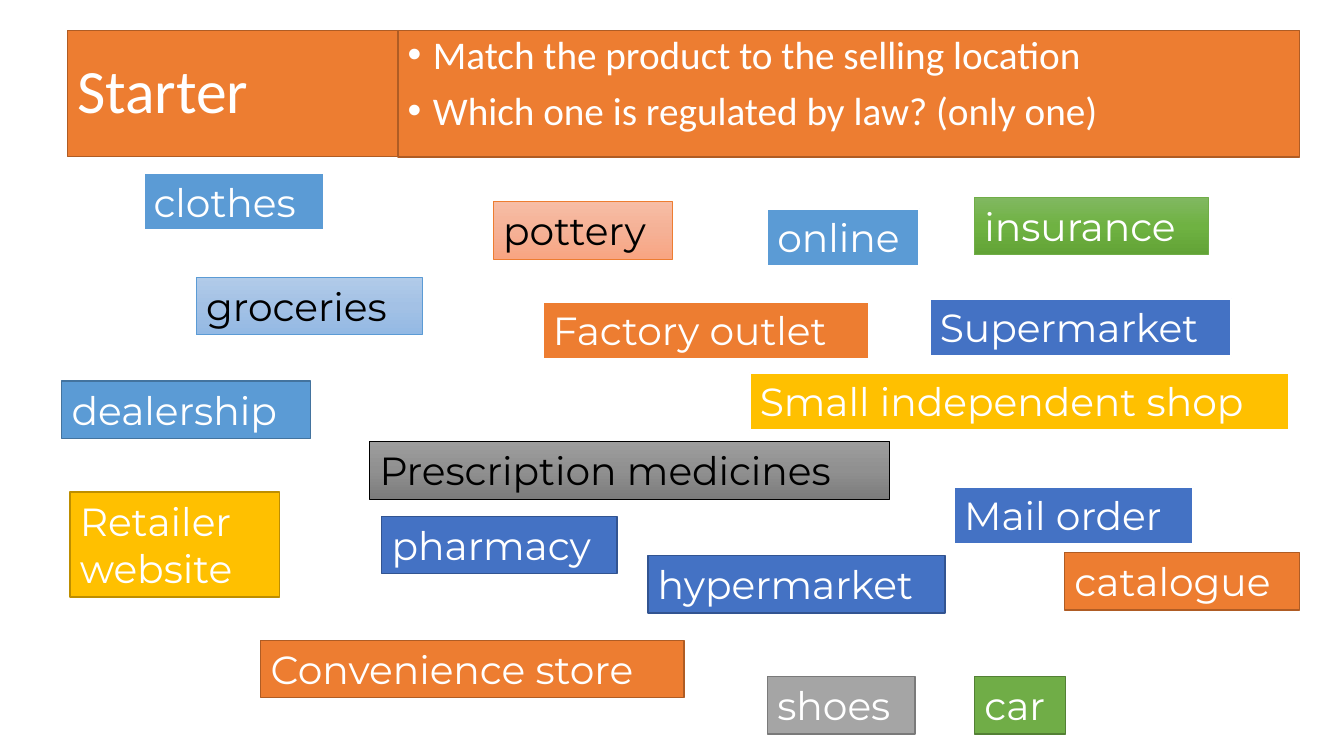
"""Build a starter slide that matches products to selling locations."""
from copy import deepcopy
from dataclasses import dataclass

from lxml import etree
from pptx import Presentation
from pptx import util as u
from pptx.dml.color import RGBColor
from pptx.enum import shapes, text
from pptx.oxml.ns import qn

SLIDE_WIDTH, SLIDE_HEIGHT = u.Inches(13.33), u.Inches(7.5)
COLUMN, ROW = SLIDE_WIDTH / 100, SLIDE_HEIGHT / 100
TAG_ROWS = 7.6
WHITE, BLACK = "FFFFFF", "000000"
HEADING_FONT, TAG_FONT = "Calibri", "Montserrat"


@dataclass(frozen=True)
class Look:
    fills: tuple[str, ...]
    line: str = WHITE
    line_width: float = 1.5
    ink: str = WHITE


@dataclass(frozen=True)
class Tag:
    words: str
    left: float
    top: float
    columns: float
    look: Look
    rows: float = TAG_ROWS
    wraps: bool = False


BLUE, ORANGE = Look(("5B9BD5",)), Look(("ED7D31",))
GOLD, INDIGO = Look(("FFC000",)), Look(("4472C4",))
BLUE_EDGED = Look(("5B9BD5",), "43739E", 1)
ORANGE_EDGED = Look(("ED7D31",), "AF5C24", 1)
GOLD_EDGED = Look(("FFC000",), "BD8E00", 1)
INDIGO_EDGED = Look(("4472C4",), "325491", 1)
GREY_EDGED = Look(("A5A5A5",), "7A7A7A", 1)
GREEN_EDGED = Look(("70AD47",), "538035", 1)
GREY_SHADED = Look(("9D9D9D", "909090", "7C7C7C"), BLACK, 0.5, BLACK)
BLUE_SHADED = Look(("B1CBE9", "A3C1E5", "93B9E4"), "5B9BD5", 0.5, BLACK)
ORANGE_SHADED = Look(("F7BDA5", "F5B196", "F8A582"), "ED7D31", 0.5, BLACK)
GREEN_SHADED = Look(("81B861", "6FB242", "62A336"), "70AD47", 0.5)

TITLE = Tag("Starter", 5, 4, 24.6, ORANGE_EDGED, 16.7)
TASKS = Tag(
    "Match the product to the selling location\n"
    "Which one is regulated by law? (only one)",
    29.6, 4, 67.1, ORANGE_EDGED, 16.8,
)
TAGS = (
    Tag("online", 57.1, 27.6, 11.3, BLUE),
    Tag("Prescription medicines", 27.5, 58.4, 38.7, GREY_SHADED),
    Tag("groceries", 14.6, 36.7, 16.8, BLUE_SHADED),
    Tag("Small independent shop", 55.8, 49.3, 40.1, GOLD),
    Tag("Factory outlet", 40.4, 39.9, 24.3, ORANGE),
    Tag("catalogue", 79.2, 73.1, 17.5, ORANGE_EDGED),
    Tag("Retailer website", 5.2, 65.1, 15.6, GOLD_EDGED, 13.9, True),
    Tag("pharmacy", 28.4, 68.3, 17.5, INDIGO_EDGED),
    Tag("clothes", 10.7, 22.9, 13.4, BLUE),
    Tag("shoes", 57.1, 89.5, 11, GREY_EDGED),
    Tag("car", 72.5, 89.5, 6.8, GREEN_EDGED),
    Tag("dealership", 4.6, 50.4, 18.5, BLUE_EDGED),
    Tag("Convenience store", 19.4, 84.7, 31.5, ORANGE_EDGED),
    Tag("Mail order", 71, 64.4, 17.8, INDIGO),
    Tag("pottery", 36.7, 26.7, 13.3, ORANGE_SHADED),
    Tag("Supermarket", 69.2, 39.5, 22.4, INDIGO),
    Tag("hypermarket", 48.2, 73.5, 22.1, INDIGO_EDGED),
    Tag("insurance", 72.5, 26.1, 17.4, GREEN_SHADED),
)


def colour(value: str) -> RGBColor:
    """Turn a hex string into a colour."""
    return RGBColor.from_string(value)


def bounds(tag: Tag) -> tuple[int, int, int, int]:
    """Convert grid columns and rows to a left, top, width and height."""
    return (round(tag.left * COLUMN), round(tag.top * ROW),
            round(tag.columns * COLUMN), round(tag.rows * ROW))


def paint(shape, look: Look) -> None:
    """Give a shape its fill and outline."""
    if len(look.fills) == 1:
        shape.fill.solid()
        shape.fill.fore_color.rgb = colour(look.fills[0])
    else:
        shape.fill.gradient()
        shape.fill.gradient_angle = 270
        stop_list = next(shape._element.iter(qn("a:gsLst")))
        stop_list.append(deepcopy(stop_list[-1]))
        for index, stop in enumerate(shape.fill.gradient_stops):
            stop.position = index / (len(look.fills) - 1)
            stop.color.rgb = colour(look.fills[index])
    shape.line.color.rgb = colour(look.line)
    shape.line.width = u.Pt(look.line_width)


def write(paragraph, words: str, font: str, size: int, ink: str) -> None:
    """Add one left-aligned run to a paragraph."""
    paragraph.alignment = text.PP_ALIGN.LEFT
    run = paragraph.add_run()
    run.text = words
    run.font.name = font
    run.font.size = u.Pt(size)
    run.font.color.rgb = colour(ink)


def add_bullet(paragraph) -> None:
    """Give a paragraph a hanging bullet."""
    properties = paragraph._p.get_or_add_pPr()
    properties.set("marL", str(u.Inches(0.25)))
    properties.set("indent", str(-u.Inches(0.25)))
    etree.SubElement(properties, qn("a:buFont")).set("typeface", "Arial")
    etree.SubElement(properties, qn("a:buChar")).set("char", "•")


def draw_title(slide) -> None:
    """Place and format the title placeholder."""
    shape = slide.shapes.title
    shape.left, shape.top, shape.width, shape.height = bounds(TITLE)
    paint(shape, TITLE.look)
    frame = shape.text_frame
    frame.auto_size = text.MSO_AUTO_SIZE.NONE
    frame.vertical_anchor = text.MSO_ANCHOR.MIDDLE
    paragraph = frame.paragraphs[0]
    paragraph.line_spacing = 0.9
    write(paragraph, TITLE.words, HEADING_FONT, 44, TITLE.look.ink)


def draw_tasks(slide) -> None:
    """Draw the bulleted instructions beside the title."""
    shape = slide.shapes.add_shape(shapes.MSO_SHAPE.RECTANGLE, *bounds(TASKS))
    shape.shadow.inherit = False
    paint(shape, TASKS.look)
    frame = shape.text_frame
    frame.word_wrap = True
    frame.vertical_anchor = text.MSO_ANCHOR.TOP
    for index, words in enumerate(TASKS.words.splitlines()):
        paragraph = frame.add_paragraph() if index else frame.paragraphs[0]
        paragraph.line_spacing = 0.9
        paragraph.space_before = u.Pt(10)
        add_bullet(paragraph)
        write(paragraph, words, HEADING_FONT, 28, TASKS.look.ink)


def draw_tag(slide, tag: Tag) -> None:
    """Draw one product or location label."""
    shape = slide.shapes.add_textbox(*bounds(tag))
    paint(shape, tag.look)
    frame = shape.text_frame
    frame.word_wrap = tag.wraps
    frame.auto_size = text.MSO_AUTO_SIZE.SHAPE_TO_FIT_TEXT
    write(frame.paragraphs[0], tag.words, TAG_FONT, 28, tag.look.ink)


def main() -> None:
    """Build and save the presentation."""
    presentation = Presentation()
    presentation.slide_width = SLIDE_WIDTH
    presentation.slide_height = SLIDE_HEIGHT
    slide = presentation.slides.add_slide(presentation.slide_layouts[5])
    draw_title(slide)
    draw_tasks(slide)
    for tag in TAGS:
        draw_tag(slide, tag)
    presentation.save("out.pptx")


if __name__ == "__main__":
    main()
